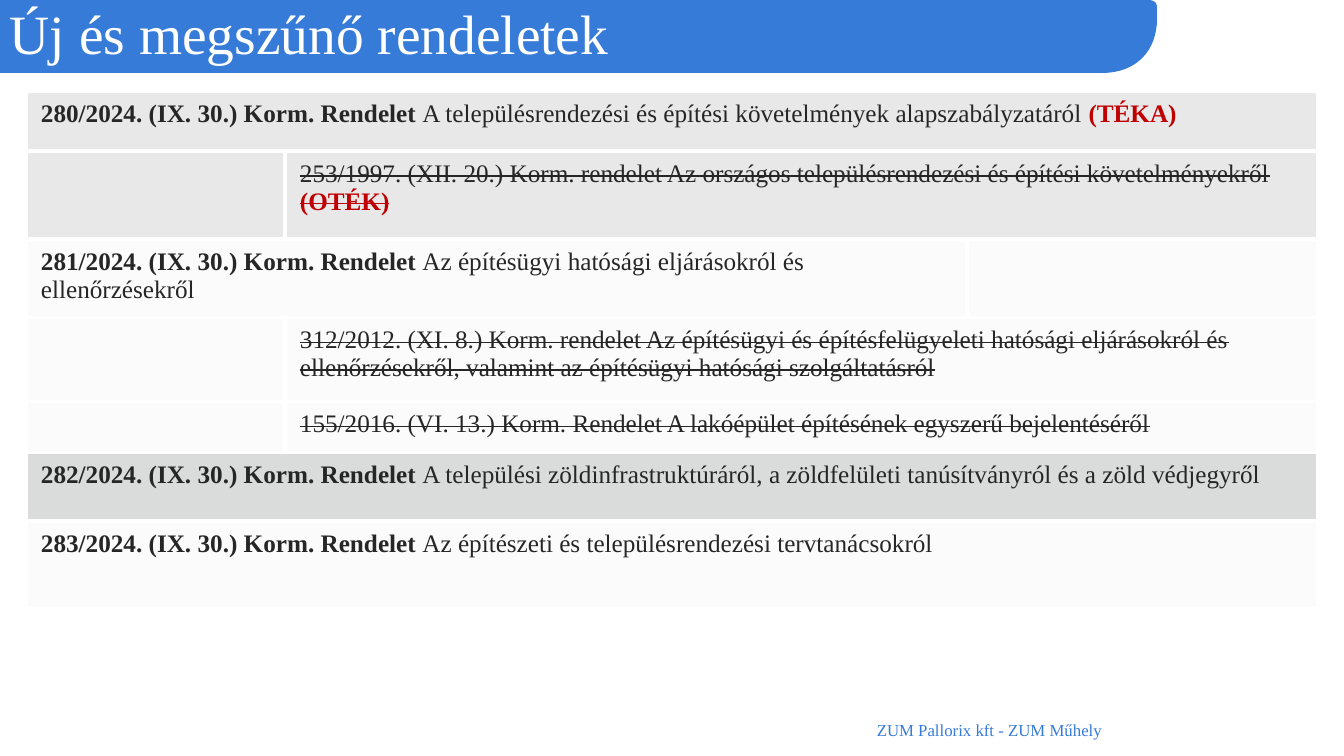
"""Build the slide listing new and repealed government decrees."""
from dataclasses import dataclass

from lxml import etree
from pptx import Presentation
from pptx import util as u
from pptx.dml.color import RGBColor
from pptx.enum import text
from pptx.oxml.ns import qn

TITLE = "Új és megszűnő rendeletek"
FOOTER = "ZUM Pallorix kft - ZUM Műhely"
COLUMNS = [259, 682, 351]
ROWS = [
    {"height": 60, "fill": "band", "spans": [3], "texts": [[
        ("280/2024. (IX. 30.) Korm. Rendelet ", "bold"),
        ("A településrendezési és építési követelmények alapszabályzatáról ", ""),
        ("(TÉKA)", "bold accent")]]},
    {"height": 88, "fill": "band", "spans": [1, 2], "texts": [[], [
        ("253/1997. (XII. 20.) Korm. rendelet Az országos településrendezési "
         "és építési követelményekről ", "strike"),
        ("(OTÉK)", "bold accent strike")]]},
    {"height": 51, "fill": "pale", "spans": [2, 1], "texts": [[
        ("281/2024. (IX. 30.) Korm. Rendelet ", "bold"),
        ("Az építésügyi hatósági eljárásokról és ellenőrzésekről", "")], []]},
    {"height": 84, "fill": "pale", "spans": [1, 2], "texts": [[], [
        ("312/2012. (XI. 8.) Korm. rendelet Az építésügyi és építésfelügyeleti "
         "hatósági eljárásokról és ellenőrzésekről, valamint az építésügyi "
         "hatósági szolgáltatásról", "strike")]]},
    {"height": 51, "fill": "pale", "spans": [1, 2], "texts": [[], [
        ("155/2016. (VI. 13.) Korm. Rendelet A lakóépület építésének egyszerű "
         "bejelentéséről", "strike")]]},
    {"height": 69, "fill": "green", "spans": [3], "texts": [[
        ("282/2024. (IX. 30.) Korm. Rendelet ", "bold"),
        ("A települési zöldinfrastruktúráról, a zöldfelületi tanúsítványról "
         "és a zöld védjegyről", "")]]},
    {"height": 88, "fill": "pale", "spans": [3], "texts": [[
        ("283/2024. (IX. 30.) Korm. Rendelet ", "bold"),
        ("Az építészeti és településrendezési tervtanácsokról", "")]]},
]


@dataclass(frozen=True)
class Theme:
    """Colours, fonts and type sizes."""
    font: str = "Times New Roman"
    blue: str = "377BD9"
    white: str = "FFFFFF"
    ink: str = "262626"
    accent: str = "C00000"
    title_size: float = 39.6
    body_size: float = 18
    footer_size: float = 12
    border: float = 3


THEME = Theme()
FILLS = {"band": ("E8E8E8", 100), "pale": ("F2F2F2", 30), "green": ("878E8B", 30)}


def px(length):
    """Turn pixels into EMU."""
    return round(length * 914400 / 100.8)


def style(font, size, color, bold=False):
    """Apply type settings to a font."""
    font.name = THEME.font
    font.size = u.Pt(size)
    font.bold = bold
    font.color.rgb = RGBColor.from_string(color)


def curve(start, first, second, end, steps=16):
    """Sample a cubic curve as points after its start."""
    points = []
    for step in range(1, steps + 1):
        t = step / steps
        weights = ((1 - t) ** 3, 3 * t * (1 - t) ** 2, 3 * t * t * (1 - t), t ** 3)
        corners = (start, first, second, end)
        points.append(tuple(sum(w * p[axis] for w, p in zip(weights, corners))
                            for axis in (0, 1)))
    return points


def add_banner(slide):
    """Draw the blue title band with its rounded right end."""
    points = [(1157, 19)]
    points += curve((1157, 19), (1157, 50), (1137, 73), (1102, 73))
    points += [(0, 73), (0, 0), (1147, 0)]
    points += curve((1147, 0), (1154, 0), (1157, 2), (1157, 8))
    builder = slide.shapes.build_freeform(px(1157), px(8), scale=1.0)
    builder.add_line_segments([(px(x), px(y)) for x, y in points])
    shape = builder.convert_to_shape()
    shape.shadow.inherit = False
    shape.fill.solid()
    shape.fill.fore_color.rgb = RGBColor.from_string(THEME.blue)
    shape.line.fill.background()


def add_label(slide, box, label, size, color, align, spacing):
    """Add a vertically centred line of text."""
    frame = slide.shapes.add_textbox(*map(px, box)).text_frame
    frame.word_wrap = True
    frame.vertical_anchor = text.MSO_ANCHOR.MIDDLE
    frame.text = label
    paragraph = frame.paragraphs[0]
    paragraph.alignment = align
    paragraph.line_spacing = spacing
    style(paragraph.runs[0].font, size, color)


def add_borders(cell):
    """Give a cell white borders on all sides."""
    properties = cell._tc.get_or_add_tcPr()
    for side in ("lnL", "lnR", "lnT", "lnB"):
        line = etree.SubElement(properties, qn(f"a:{side}"), w=str(u.Pt(THEME.border)))
        fill = etree.SubElement(line, qn("a:solidFill"))
        etree.SubElement(fill, qn("a:srgbClr"), val=THEME.white)


def fill_cell(cell, name):
    """Fill a cell with a named colour and opacity."""
    color, opacity = FILLS[name]
    cell.fill.solid()
    cell.fill.fore_color.rgb = RGBColor.from_string(color)
    if opacity < 100:
        color_element = cell._tc.tcPr.find(f"{qn('a:solidFill')}/{qn('a:srgbClr')}")
        etree.SubElement(color_element, qn("a:alpha"), val=str(opacity * 1000))


def write_cell(cell, pieces):
    """Write the runs of a decree into a cell."""
    cell.margin_left = px(15)
    cell.margin_right = cell.margin_top = cell.margin_bottom = px(9)
    paragraph = cell.text_frame.paragraphs[0]
    paragraph.font.size = u.Pt(THEME.body_size)
    for words, marks in pieces:
        run = paragraph.add_run()
        run.text = words
        color = THEME.accent if "accent" in marks else THEME.ink
        style(run.font, THEME.body_size, color, "bold" in marks)
        if "strike" in marks:
            run._r.get_or_add_rPr().set("strike", "sngStrike")


def add_decrees(slide):
    """Add the table of decrees."""
    heights = [row["height"] for row in ROWS]
    table = slide.shapes.add_table(len(ROWS), len(COLUMNS), px(26), px(91),
                                   px(sum(COLUMNS)), px(sum(heights))).table
    table.first_row = table.horz_banding = False
    for column, width in zip(table.columns, COLUMNS):
        column.width = px(width)
    for index, row in enumerate(ROWS):
        table.rows[index].height = px(row["height"])
        start = 0
        for span, pieces in zip(row["spans"], row["texts"]):
            cell = table.cell(index, start)
            if span > 1:
                cell.merge(table.cell(index, start + span - 1))
            add_borders(cell)
            for offset in range(span):
                fill_cell(table.cell(index, start + offset), row["fill"])
            write_cell(cell, pieces)
            start += span


def main():
    """Build and save the presentation."""
    presentation = Presentation()
    presentation.slide_width, presentation.slide_height = px(1344), px(756)
    slide = presentation.slides.add_slide(presentation.slide_layouts[6])
    add_banner(slide)
    add_label(slide, (0, 0, 1119, 73), TITLE, THEME.title_size, THEME.white,
              text.PP_ALIGN.LEFT, 0.9)
    add_label(slide, (802, 710, 375, 40), FOOTER, THEME.footer_size, THEME.blue,
              text.PP_ALIGN.CENTER, 1.0)
    add_decrees(slide)
    presentation.save("out.pptx")


if __name__ == "__main__":
    main()
